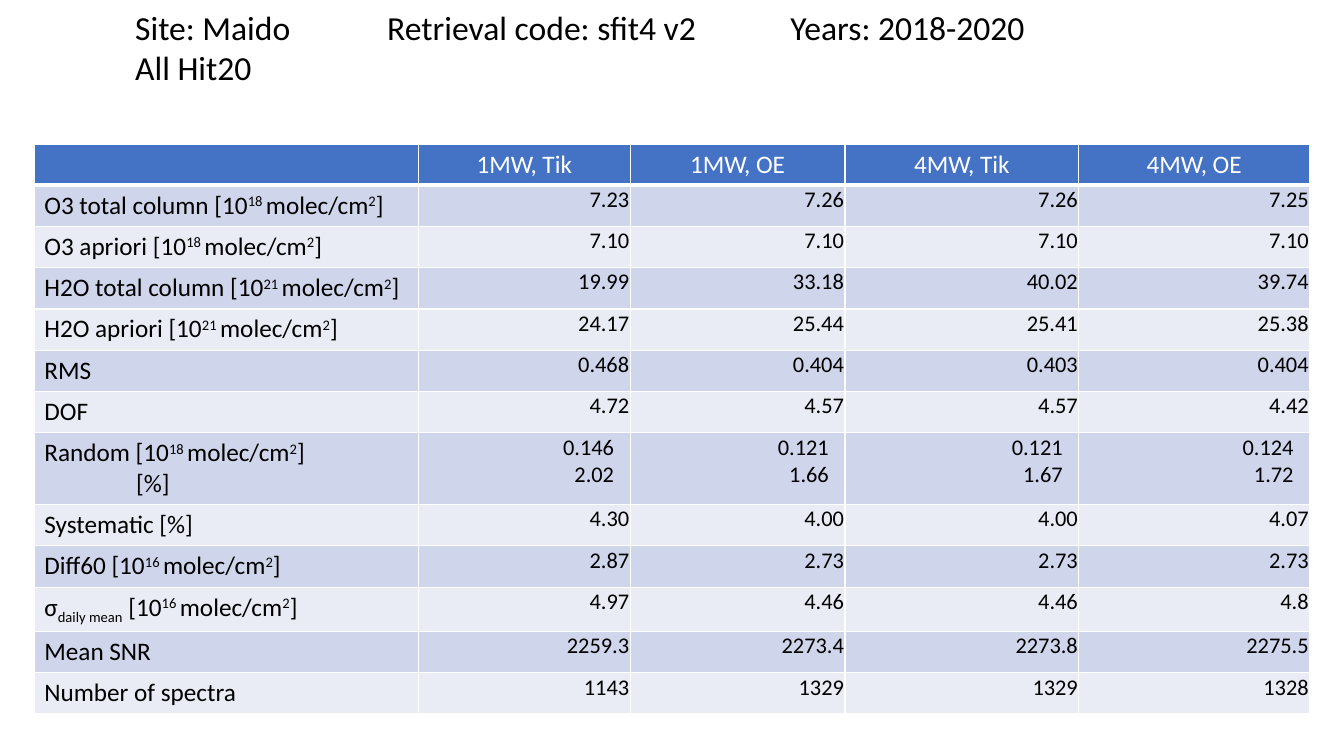
import pptx
import pptx.util
import pptx.dml.color
import pptx.enum.text
from pptx.oxml.ns import qn
from lxml import etree

Inches = pptx.util.Inches
Pt = pptx.util.Pt
ALIGN = pptx.enum.text.PP_ALIGN
ANCHOR = pptx.enum.text.MSO_ANCHOR

FONT = "Calibri"
WHITE, BLACK, BLUE = "FFFFFF", "000000", "4472C4"
BANDS = ["CFD5EA", "E9EBF5"]
COLS = [3.81, 2.1, 2.13, 2.32, 2.29]
HEADS = ["", "1MW, Tik", "1MW, OE", "4MW, Tik", "4MW, OE"]
BASES = {"^": "30000", "_": "-25000"}


def unit(power):
    return f"[10|^{power} |molec/cm|^2|]"


# Label (parts split by |, ^ raised, _ lowered), then one value per column
ROWS = [
    ("O3 total column " + unit(18), "7.23", "7.26", "7.26", "7.25"),
    ("O3 apriori " + unit(18), "7.10", "7.10", "7.10", "7.10"),
    ("H2O total column " + unit(21), "19.99", "33.18", "40.02", "39.74"),
    ("H2O apriori " + unit(21), "24.17", "25.44", "25.41", "25.38"),
    ("RMS", "0.468", "0.404", "0.403", "0.404"),
    ("DOF", "4.72", "4.57", "4.57", "4.42"),
    ("Random " + unit(18) + "\n[%]",
     "0.146\n2.02", "0.121\n1.66", "0.121\n1.67", "0.124\n1.72"),
    ("Systematic [%]", "4.30", "4.00", "4.00", "4.07"),
    ("Diff60 " + unit(16), "2.87", "2.73", "2.73", "2.73"),
    ("σ|_daily mean| " + unit(16), "4.97", "4.46", "4.46", "4.8"),
    ("Mean SNR", "2259.3", "2273.4", "2273.8", "2275.5"),
    ("Number of spectra", "1143", "1329", "1329", "1328"),
]


def color(code):
    return pptx.dml.color.RGBColor.from_string(code)


def style(frame, size, code, align):
    for para in frame.paragraphs:
        para.alignment = align
        for run in para.runs:
            run.font.name = FONT
            run.font.size = Pt(size)
            run.font.color.rgb = color(code)


def border(cell, base=1):
    props = cell._tc.get_or_add_tcPr()
    for side, width in (("L", 1), ("R", 1), ("T", 1), ("B", base)):
        line = etree.SubElement(props, qn(f"a:ln{side}"), w=str(Pt(width)))
        fill = etree.SubElement(line, qn("a:solidFill"))
        etree.SubElement(fill, qn("a:srgbClr"), val=WHITE)


def paint(cell, code, base=1):
    border(cell, base)
    cell.fill.solid()
    cell.fill.fore_color.rgb = color(code)


def fill_head(cell, text):
    paint(cell, BLUE, 3)
    cell.text_frame.text = text
    style(cell.text_frame, 18, WHITE, ALIGN.CENTER)


def fill_label(cell, text, band):
    paint(cell, band)
    frame = cell.text_frame
    for i, line in enumerate(text.split("\n")):
        para = frame.add_paragraph() if i else frame.paragraphs[0]
        for part in line.split("|"):
            run = para.add_run()
            run.text = part.lstrip("^_")
            if part[0] in BASES:
                run.font._element.set("baseline", BASES[part[0]])
        if i:  # second line sits under the unit
            para._p.get_or_add_pPr().set("marL", str(Inches(0.91)))
    style(frame, 18, BLACK, ALIGN.LEFT)


def fill_value(cell, text, band):
    paint(cell, band)
    cell.margin_left = cell.margin_top = cell.margin_right = Inches(0.01)
    cell.margin_bottom = 0
    frame = cell.text_frame
    frame.text = text
    style(frame, 16, BLACK, ALIGN.RIGHT)
    if "\n" in text:  # upper value is set in from the edge
        frame.paragraphs[0]._p.get_or_add_pPr().set("marR", str(Inches(0.15)))


def add_title(slide):
    title = slide.shapes.title
    title.left, title.top = Inches(1.24), Inches(0.02)
    title.width, title.height = Inches(10.55), Inches(0.91)
    frame = title.text_frame
    frame.text = ("Site: Maido\t\tRetrieval code: sfit4 v2\t\tYears: 2018-2020"
                  "\nAll Hit20")
    frame.word_wrap = True
    frame.auto_size = pptx.enum.text.MSO_AUTO_SIZE.NONE
    frame.vertical_anchor = ANCHOR.TOP
    style(frame, 24, BLACK, ALIGN.LEFT)


def add_results(slide):
    table = slide.shapes.add_table(
        len(ROWS) + 1, len(COLS), Inches(0.34), Inches(1.43),
        Inches(sum(COLS)), Inches(5.57)).table
    for col, width in zip(table.columns, COLS):
        col.width = Inches(width)
    for row in table.rows:
        row.height = Inches(0.41)
    table.rows[0].height = Inches(0.37)
    table.rows[7].height = Inches(0.7)
    for c, text in enumerate(HEADS):
        fill_head(table.cell(0, c), text)
    for r, (label, *values) in enumerate(ROWS, 1):
        band = BANDS[(r - 1) % 2]
        fill_label(table.cell(r, 0), label, band)
        for c, value in enumerate(values, 1):
            fill_value(table.cell(r, c), value, band)


def main():
    deck = pptx.Presentation()
    deck.slide_width, deck.slide_height = Inches(13.33), Inches(7.5)
    slide = deck.slides.add_slide(deck.slide_layouts[5])
    add_results(slide)
    add_title(slide)
    deck.save("out.pptx")


if __name__ == "__main__":
    main()
